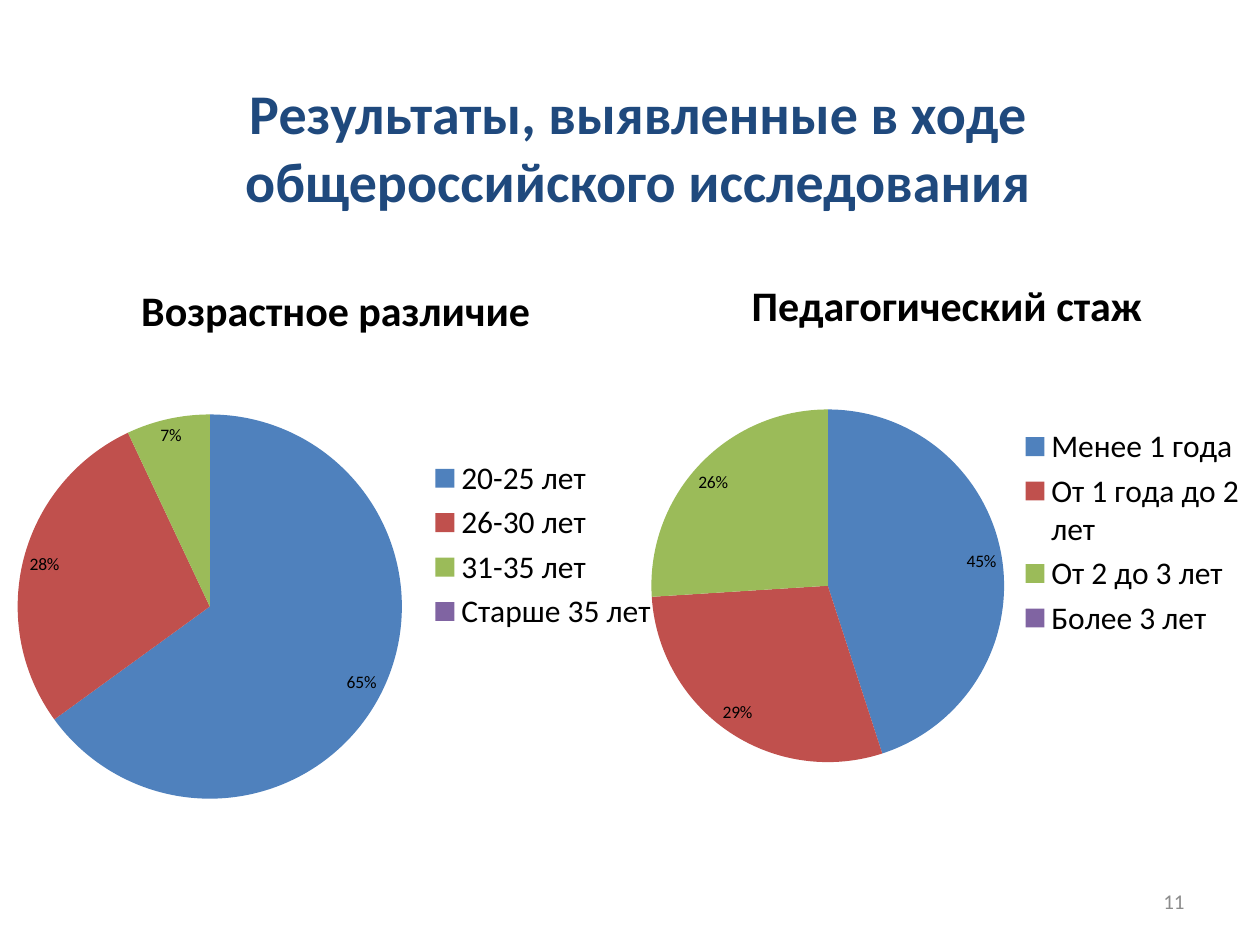
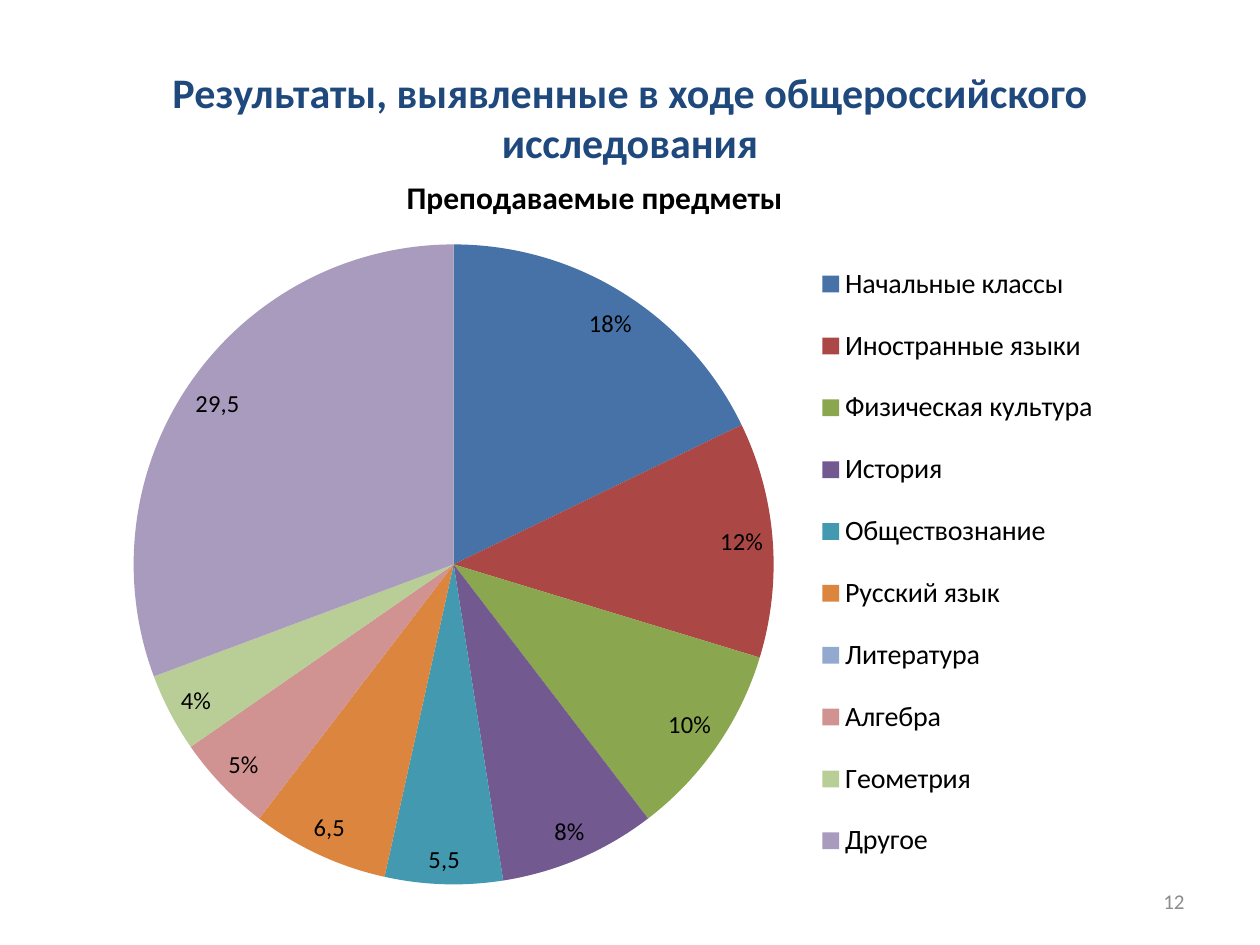
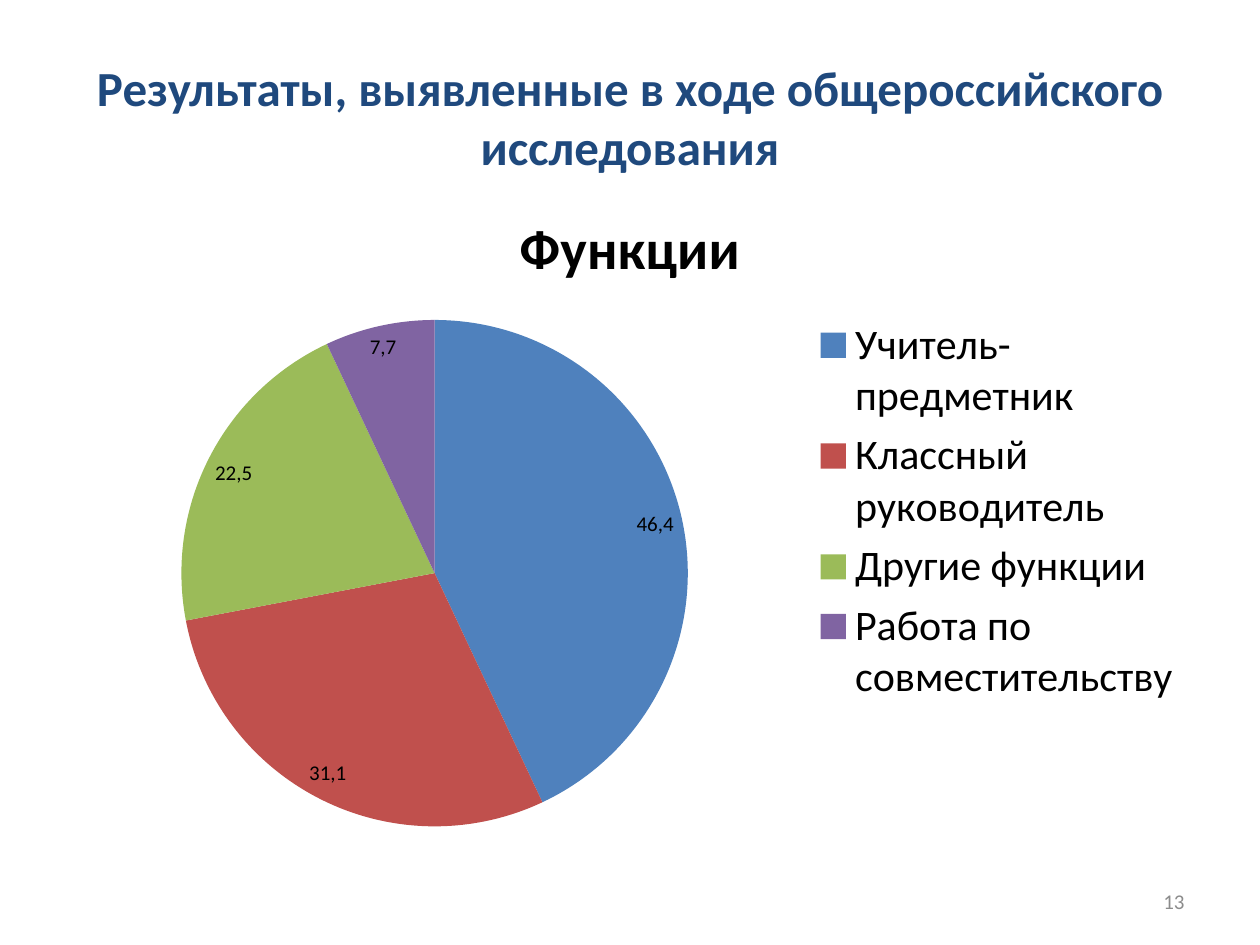
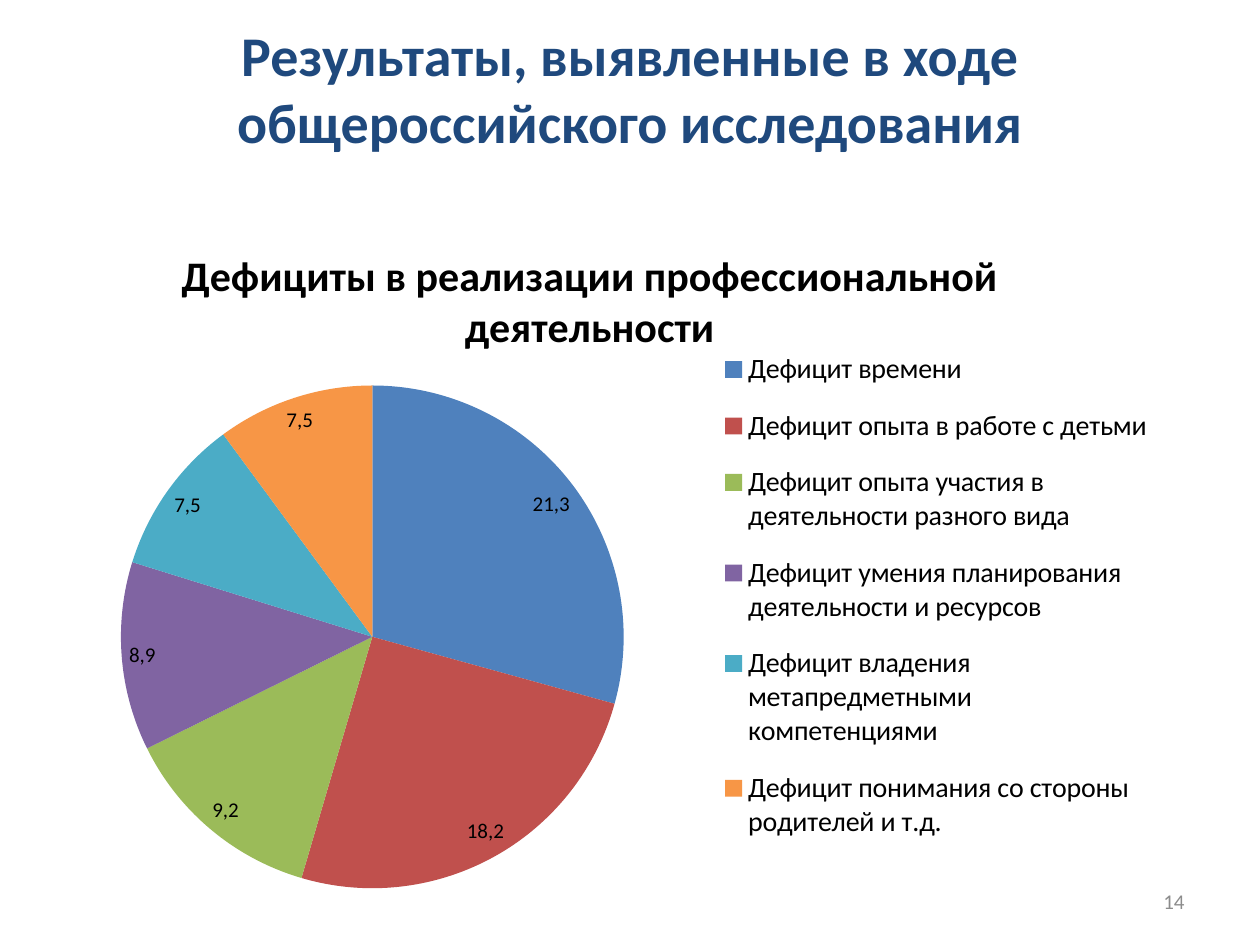
from pptx import Presentation
from pptx.chart.data import CategoryChartData
from pptx.dml.color import RGBColor
from pptx.enum.chart import XL_CHART_TYPE, XL_LABEL_POSITION, XL_LEGEND_POSITION
from pptx.enum.text import MSO_ANCHOR, PP_ALIGN
from pptx.oxml import parse_xml
from pptx.oxml.ns import nsdecls, qn
from pptx.util import Inches, Pt

FONT = "Calibri"
COLORS = {
    "heading": "1F497D",
    "number": "8C8C8C",
    "text": "000000",
    "blue": "4F81BD",
    "red": "C0504D",
    "green": "9BBB59",
    "purple": "8064A2",
    "teal": "4BACC6",
    "orange": "F79646",
    "deep_blue": "4672A8",
    "deep_red": "AB4744",
    "deep_green": "8AA64F",
    "deep_purple": "725990",
    "deep_teal": "4299B0",
    "deep_orange": "DC853E",
    "pale_blue": "93A9CF",
    "pale_red": "D19392",
    "pale_green": "B9CD96",
    "pale_purple": "A99BBD",
}
SLICES = ["blue", "red", "green", "purple", "teal", "orange"]
SUBJECT_SLICES = ["deep_" + name for name in SLICES] + [
    "pale_" + name for name in SLICES[:4]]
HEADING = "Результаты, выявленные в ходе общероссийского исследования"
NUMBER_BOX = (7.17, 6.95, 2.33, 0.4)


def rgb(name):
    return RGBColor.from_string(COLORS[name])


def set_font(font, size, color="text", bold=False):
    font.name = FONT
    font.size = Pt(size)
    font.bold = bold
    font.color.rgb = rgb(color)


def add_text(slide, text, box, size=12, color="text", bold=False, align=PP_ALIGN.CENTER):
    frame = slide.shapes.add_textbox(*map(Inches, box)).text_frame
    frame.word_wrap = True
    frame.vertical_anchor = MSO_ANCHOR.MIDDLE
    paragraph = frame.paragraphs[0]
    paragraph.alignment = align
    run = paragraph.add_run()
    run.text = text
    set_font(run.font, size, color, bold)


def add_slide(deck, number, heading_box, heading_size):
    slide = deck.slides.add_slide(deck.slide_layouts[6])
    add_text(slide, HEADING, heading_box, size=heading_size, color="heading", bold=True)
    add_text(slide, str(number), NUMBER_BOX, color="number", align=PP_ALIGN.RIGHT)
    return slide


def layout_xml(box, area, target=""):
    left, top, width, height = box
    x, y, w, h = area
    return parse_xml(
        f'<c:layout {nsdecls("c")}><c:manualLayout>{target}'
        '<c:xMode val="edge"/><c:yMode val="edge"/>'
        f'<c:x val="{x / width:.4f}"/><c:y val="{y / height:.4f}"/>'
        f'<c:w val="{w / width:.4f}"/><c:h val="{h / height:.4f}"/>'
        '</c:manualLayout></c:layout>')


def place_pie(chart, box, pie):
    x, y, diameter = pie
    plot_area = chart.element.find(".//" + qn("c:plotArea"))
    for layout in plot_area.findall(qn("c:layout")):
        plot_area.remove(layout)
    plot_area.insert(0, layout_xml(
        box, (x, y, diameter, diameter), '<c:layoutTarget val="inner"/>'))


def place_legend(chart, box, area):
    legend = chart.element.find(".//" + qn("c:legend"))
    for layout in legend.findall(qn("c:layout")):
        legend.remove(layout)
    legend.find(qn("c:legendPos")).addnext(layout_xml(box, area))


def label_slices(series, size, own_labels):
    labels = series.data_labels
    set_font(labels.font, size)
    labels.show_percentage = True
    labels.show_value = False
    labels.number_format = "0%"
    labels.number_format_is_linked = False
    labels.position = XL_LABEL_POSITION.BEST_FIT
    for index, text in sorted(own_labels.items()):
        if text is None:
            holder = series.points[index].format and series._element.find(qn("c:dLbls"))
            holder.insert(len(holder.findall(qn("c:dLbl"))), parse_xml(
                f'<c:dLbl {nsdecls("c")}><c:idx val="{index}"/><c:delete val="1"/></c:dLbl>'))
            continue
        label = series.points[index].data_label
        run = label.text_frame.paragraphs[0].add_run()
        run.text = text
        set_font(run.font, size)
        label.position = XL_LABEL_POSITION.BEST_FIT


def add_pie(slide, box, title, shares, pie, title_size=24, legend_size=18, label_size=10,
            series_name="Series 1", slices=SLICES, own_labels=None, legend_area=None):
    data = CategoryChartData(number_format="General")
    data.categories = list(shares)
    data.add_series(series_name, list(shares.values()))
    chart = slide.shapes.add_chart(XL_CHART_TYPE.PIE, *map(Inches, box), data).chart
    set_font(chart.font, 10)

    chart.has_title = True
    chart.chart_title.include_in_layout = False
    run = chart.chart_title.text_frame.paragraphs[0].add_run()
    run.text = title
    set_font(run.font, title_size, bold=True)

    chart.has_legend = True
    chart.legend.position = XL_LEGEND_POSITION.RIGHT
    chart.legend.include_in_layout = False
    set_font(chart.legend.font, legend_size)

    plot = chart.plots[0]
    plot.vary_by_categories = True
    series = plot.series[0]
    for index, color in enumerate(slices[:len(shares)]):
        fill = series.points[index].format.fill
        fill.solid()
        fill.fore_color.rgb = rgb(color)
    label_slices(series, label_size, own_labels or {})
    place_pie(chart, box, pie)
    if legend_area:
        place_legend(chart, box, legend_area)


def build_age_and_experience(deck):
    slide = add_slide(deck, 11, (0.63, 0.57, 8.87, 1.18), 32)
    ages = {"20-25 лет": 65, "26-30 лет": 28, "31-35 лет": 7, "Старше 35 лет": 0}
    add_pie(slide, (0, 2.03, 5.33, 4.59), "Возрастное различие", ages, (0.14, 1.26, 3.05))
    experience = {"Менее 1 года": 45, "От 1 года до 2 лет": 29,
                  "От 2 до 3 лет": 26, "Более 3 лет": 0}
    add_pie(slide, (5.03, 2, 4.97, 4.45), "Педагогический стаж", experience,
            (0.14, 1.25, 2.8))


def build_subjects(deck):
    slide = add_slide(deck, 12, (0.5, 0.47, 9, 0.91), 24)
    subjects = {
        "Начальные классы": 18, "Иностранные языки": 12, "Физическая культура": 10,
        "История": 8, "Обществознание": 6, "Русский язык": 7, "Литература": 0,
        "Алгебра": 5, "Геометрия": 4, "Другое": 31,
    }
    add_pie(slide, (0.3, 1.17, 8.84, 6.18), "Преподаваемые предметы", subjects,
            (0.76, 0.77, 5.08), title_size=18, legend_size=16, label_size=14,
            slices=SUBJECT_SLICES, own_labels={4: "5,5", 5: "6,5", 6: None, 9: "29,5"},
            legend_area=(6.1, 0.73, 2.4, 5.13))


def build_functions(deck):
    slide = add_slide(deck, 13, (0.5, 0.3, 9, 1.25), 28)
    functions = {"Учитель-предметник": 43, "Классный руководитель": 29,
                 "Другие функции": 21, "Работа по совместительству": 7}
    add_pie(slide, (0.5, 1.42, 9, 5.28), "Функции", functions, (0.94, 1.12, 4.02),
            title_size=32, legend_size=24, label_size=12, series_name="Функции",
            own_labels=dict(enumerate(["46,4", "31,1", "22,5", "7,7"])))


def build_deficits(deck):
    slide = add_slide(deck, 14, (0.5, 0.3, 9, 0.79), 32)
    title = "Дефициты в реализации профессиональной деятельности"
    deficits = {
        "Дефицит времени": 29,
        "Дефицит опыта в работе с детьми": 25,
        "Дефицит опыта участия в деятельности разного вида": 13,
        "Дефицит умения планирования деятельности и ресурсов": 12,
        "Дефицит владения метапредметными компетенциями": 10,
        "Дефицит понимания со стороны родителей и т.д.": 10,
    }
    add_pie(slide, (0.13, 1.74, 9.1, 5.44), title, deficits, (0.83, 1.32, 3.99),
            legend_size=16, label_size=12, series_name=title,
            own_labels=dict(enumerate(["21,3", "18,2", "9,2", "8,9", "7,5", "7,5"])),
            legend_area=(5.6, 0.88, 3.4, 4.22))


def main():
    deck = Presentation()
    deck.slide_width = Inches(10)
    deck.slide_height = Inches(7.5)
    build_age_and_experience(deck)
    build_subjects(deck)
    build_functions(deck)
    build_deficits(deck)
    deck.save("out.pptx")


if __name__ == "__main__":
    main()
